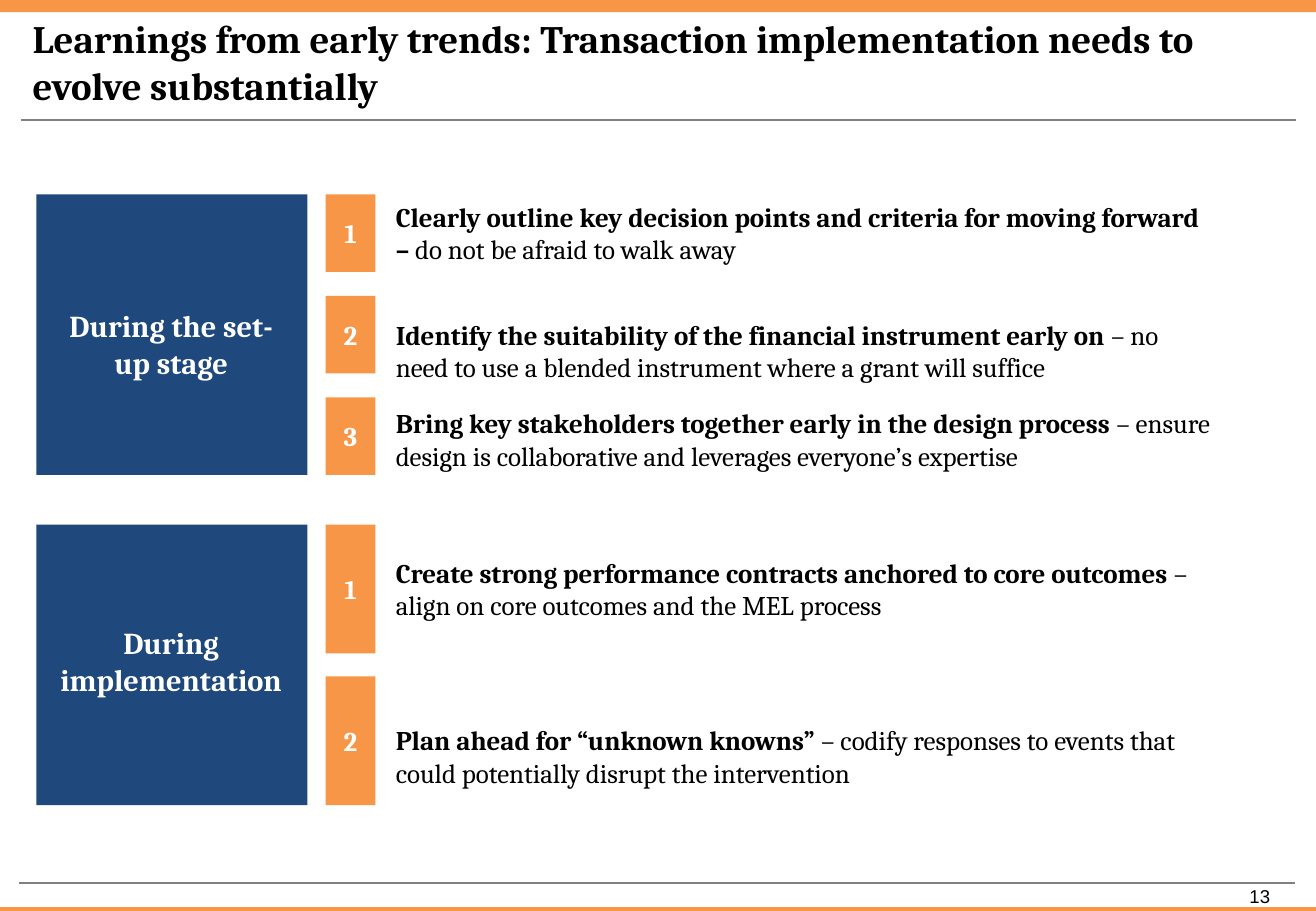
"""Build the slide on learnings from early trends."""
from dataclasses import dataclass

from lxml import etree
from pptx import Presentation
from pptx.dml.color import RGBColor
from pptx.enum.shapes import MSO_CONNECTOR, MSO_SHAPE
from pptx.enum.text import MSO_ANCHOR, MSO_AUTO_SIZE, PP_ALIGN
from pptx.oxml.ns import qn
from pptx.shapes.autoshape import Shape
from pptx.slide import Slide
from pptx.text.text import TextFrame, _Paragraph
from pptx.util import Pt

RECT = MSO_SHAPE.RECTANGLE
STRAIGHT = MSO_CONNECTOR.STRAIGHT
TOP, MIDDLE, BOTTOM = MSO_ANCHOR.TOP, MSO_ANCHOR.MIDDLE, MSO_ANCHOR.BOTTOM
LEFT, CENTER = PP_ALIGN.LEFT, PP_ALIGN.CENTER
FIXED = MSO_AUTO_SIZE.NONE


@dataclass(frozen=True)
class Theme:
    orange: RGBColor = RGBColor(0xF7, 0x96, 0x46)
    navy: RGBColor = RGBColor(0x1F, 0x49, 0x7D)
    gray: RGBColor = RGBColor(0x80, 0x80, 0x80)
    black: RGBColor = RGBColor(0, 0, 0)
    white: RGBColor = RGBColor(0xFF, 0xFF, 0xFF)
    serif: str = "Cambria"
    sans: str = "Arial"
    title: float = 23
    label: float = 18
    body: float = 16
    page: float = 11


@dataclass(frozen=True)
class Box:
    left: float
    top: float
    width: float
    height: float


@dataclass(frozen=True)
class Point:
    top: float
    lead: str
    rest: str


@dataclass(frozen=True)
class Stage:
    name: str
    top: float
    label: float
    chip: float
    points: tuple[Point, ...]


THEME = Theme()
WIDTH, HEIGHT = 780, 540
BLOCK = 166.3
STAGES = (
    Stage("During the set-up stage", 115.2, 178.6, 46, (
        Point(115.2, "Clearly outline key decision points and criteria for moving forward – ",
              "do not be afraid to walk away"),
        Point(185, "Identify the suitability of the financial instrument early on ",
              "– no need to use a blended instrument where a grant will suffice"),
        Point(237.6, "Bring key stakeholders together early in the design process ",
              "– ensure design is collaborative and leverages everyone’s expertise"),
    )),
    Stage("During implementation", 311, 366.5, 76.3, (
        Point(326.2, "Create strong performance contracts anchored to core outcomes ",
              "– align on core outcomes and the MEL process"),
        Point(425.5, "Plan ahead for “unknown knowns” ",
              "– codify responses to events that could potentially disrupt the intervention"),
    )),
)


def place(shape: Shape, box: Box) -> None:
    shape.left, shape.top = Pt(box.left), Pt(box.top)
    shape.width, shape.height = Pt(box.width), Pt(box.height)


def style(para: _Paragraph, size: float, color: RGBColor, bold: bool = True,
          align: PP_ALIGN = CENTER, face: str = THEME.serif) -> None:
    para.alignment = align
    for run in para.runs:
        run.font.size, run.font.name = Pt(size), face
        run.font.bold, run.font.color.rgb = bold, color


def setup(frame: TextFrame, anchor: MSO_ANCHOR, side: float = 7.2, edge: float = 3.6) -> None:
    frame.word_wrap, frame.auto_size = True, FIXED
    frame.vertical_anchor = anchor
    frame.margin_left = frame.margin_right = Pt(side)
    frame.margin_top = frame.margin_bottom = Pt(edge)


def add_rect(slide: Slide, box: Box, color: RGBColor) -> Shape:
    rect = slide.shapes.add_shape(RECT, 0, 0, 0, 0)
    place(rect, box)
    rect.shadow.inherit = False
    rect.fill.solid()
    rect.fill.fore_color.rgb = color
    rect.line.fill.background()
    return rect


def add_text(slide: Slide, box: Box, text: str) -> _Paragraph:
    shape = slide.shapes.add_textbox(0, 0, 0, 0)
    place(shape, box)
    setup(shape.text_frame, TOP)
    shape.text_frame.text = text
    return shape.text_frame.paragraphs[0]


def add_rule(slide: Slide, left: float, top: float) -> None:
    rule = slide.shapes.add_connector(STRAIGHT, Pt(left), Pt(top), Pt(left + 756), Pt(top))
    rule.line.color.rgb, rule.line.width = THEME.gray, Pt(0.75)
    etree.SubElement(rule._element.spPr, qn("a:effectLst"))


def add_frame(slide: Slide) -> None:
    add_rect(slide, Box(0, 537.8, WIDTH, 2.2), THEME.orange)
    add_rule(slide, 12.2, 71.1)
    add_rect(slide, Box(0, 0, WIDTH, 7.2), THEME.orange)
    add_rule(slide, 11.5, 523.4)
    page = add_text(slide, Box(725.8, 521.3, 41.8, 18), "13")
    style(page, THEME.page, THEME.black, bold=False, face=THEME.sans)


def add_title(slide: Slide) -> None:
    title = slide.shapes.title
    place(title, Box(12.2, 15.8, 755.3, 55.4))
    setup(title.text_frame, BOTTOM, edge=7.2)
    title.text_frame.text = ("Learnings from early trends: Transaction implementation "
                             "needs to evolve substantially")
    style(title.text_frame.paragraphs[0], THEME.title, THEME.black, align=LEFT)


def add_stage(slide: Slide, stage: Stage) -> None:
    add_rect(slide, Box(21.6, stage.top, 160.6, BLOCK), THEME.navy)
    label = add_text(slide, Box(28, stage.label, 146.9, 40.3), stage.name)
    style(label, THEME.label, THEME.white)
    step = (BLOCK - stage.chip) / (len(stage.points) - 1)
    for index, point in enumerate(stage.points):
        chip = add_rect(slide, Box(193, stage.top + index * step, 29.5, stage.chip), THEME.orange)
        setup(chip.text_frame, MIDDLE, side=6.5)
        chip.text_frame.text = str(index + 1)
        style(chip.text_frame.paragraphs[0], THEME.body, THEME.white)
        para = add_text(slide, Box(227.5, point.top, 498.2, 46), point.lead)
        para.add_run().text = point.rest
        style(para, THEME.body, THEME.black, align=LEFT)
        para.runs[1].font.bold = False


def main() -> None:
    deck = Presentation()
    deck.slide_width, deck.slide_height = Pt(WIDTH), Pt(HEIGHT)
    slide = deck.slides.add_slide(deck.slide_layouts[5])
    add_frame(slide)
    add_title(slide)
    for stage in STAGES:
        add_stage(slide, stage)
    deck.save("out.pptx")


if __name__ == "__main__":
    main()
